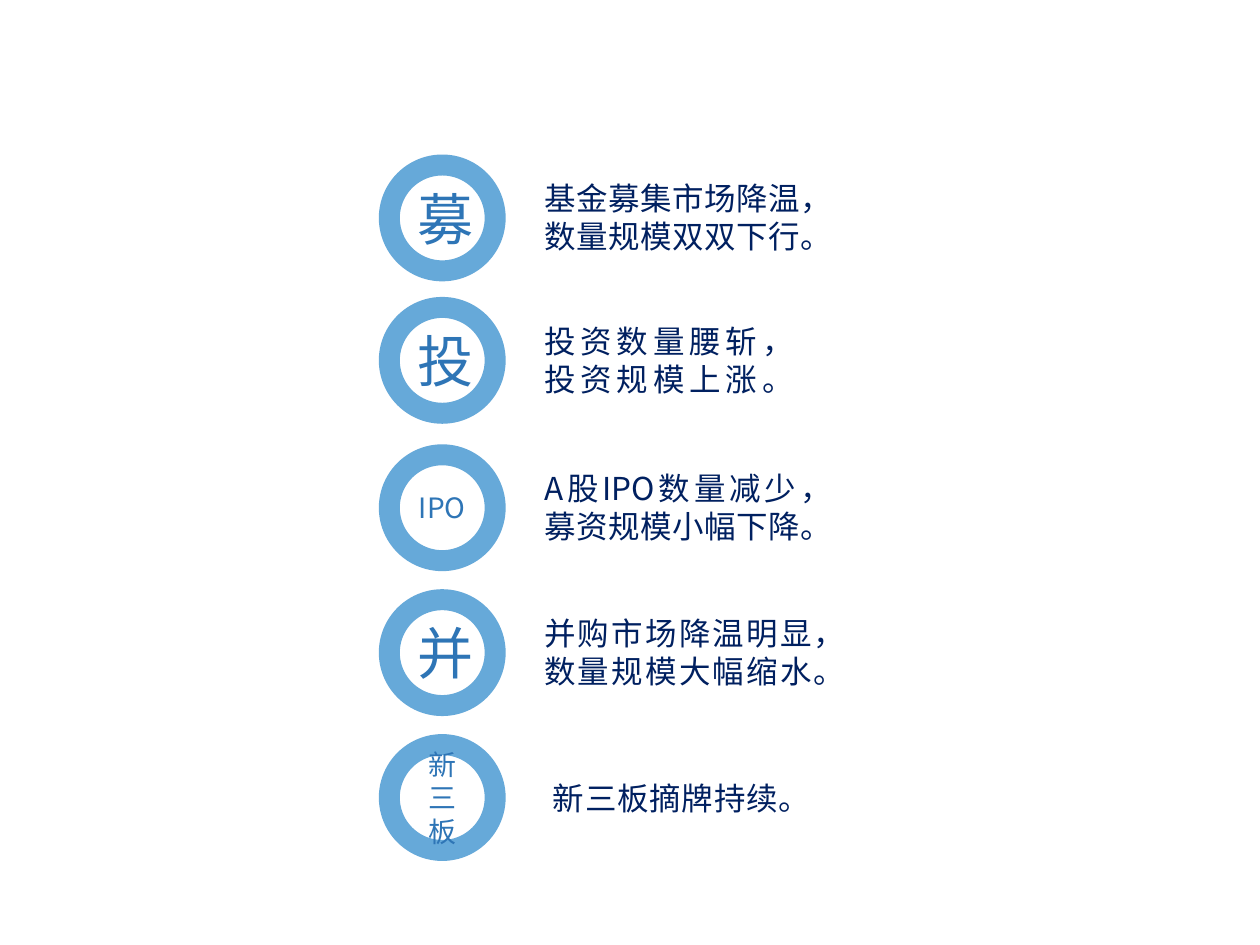
from dataclasses import dataclass

import pptx
import pptx.dml.color
import pptx.enum.lang
import pptx.enum.shapes
import pptx.enum.text
import pptx.oxml
import pptx.oxml.ns
import pptx.util
from pptx.util import Inches


@dataclass(frozen=True)
class Theme:
    ring: str = "0070C0"
    label: str = "2E75B6"
    body: str = "002060"
    label_font: str = "Noto Sans CJK JP"
    body_font: str = "Noto Sans CJK SC"
    ring_width: float = 12
    ring_alpha: int = 60
    large: float = 32
    small: float = 16
    body_size: float = 18


class Slide:
    def __init__(self, page, theme):
        self.page = page
        self.theme = theme

    def add_span(self, para, text, font, size, color, align):
        para.alignment = align
        span = para.add_run()
        span.text = text
        span.font.name = font
        span.font.size = pptx.util.Pt(size)
        span.font.color.rgb = pptx.dml.color.RGBColor.from_string(color)
        span.font.language_id = pptx.enum.lang.MSO_LANGUAGE_ID.SIMPLIFIED_CHINESE
        # East Asian glyphs take their typeface from a:ea, placed after a:latin
        latin = span.font._element.find(pptx.oxml.ns.qn("a:latin"))
        latin.addnext(pptx.oxml.parse_xml(
            f'<a:ea {pptx.oxml.ns.nsdecls("a")} typeface="{font}"/>'))

    def ring(self, left, top, size, label, label_size):
        theme = self.theme
        ring = self.page.shapes.add_shape(
            pptx.enum.shapes.MSO_SHAPE.OVAL,
            Inches(left), Inches(top), Inches(size), Inches(size))
        ring.shadow.inherit = False
        ring.fill.background()
        ring.line.width = pptx.util.Pt(theme.ring_width)
        ring.line.color.rgb = pptx.dml.color.RGBColor.from_string(theme.ring)
        color = ring.line._ln.find(".//" + pptx.oxml.ns.qn("a:srgbClr"))
        color.append(pptx.oxml.parse_xml(
            f'<a:alpha {pptx.oxml.ns.nsdecls("a")} val="{theme.ring_alpha * 1000}"/>'))
        frame = ring.text_frame
        frame.word_wrap = True
        frame.vertical_anchor = pptx.enum.text.MSO_ANCHOR.MIDDLE
        self.add_span(frame.paragraphs[0], label, theme.label_font, label_size,
                      theme.label, pptx.enum.text.PP_ALIGN.CENTER)

    def text(self, left, top, width, height, lines):
        theme = self.theme
        box = self.page.shapes.add_textbox(
            Inches(left), Inches(top), Inches(width), Inches(height))
        frame = box.text_frame
        frame.word_wrap = True
        frame.auto_size = pptx.enum.text.MSO_AUTO_SIZE.SHAPE_TO_FIT_TEXT
        for index, line in enumerate(lines):
            para = frame.add_paragraph() if index else frame.paragraphs[0]
            self.add_span(para, line, theme.body_font, theme.body_size,
                          theme.body, pptx.enum.text.PP_ALIGN.JUSTIFY)


RING_LEFT, RING_SIZE = 3.09, 0.84
TEXT_HEIGHTS = {1: 0.4, 2: 0.71}


def main():
    theme = Theme()
    deck = pptx.Presentation()
    deck.slide_width, deck.slide_height = Inches(10), Inches(7.5)
    slide = Slide(deck.slides.add_slide(deck.slide_layouts[6]), theme)

    # ring top, label, label size, text left, text width, lines
    topics = [
        (1.31, "募", theme.large, 4.22, 2.23, ["基金募集市场降温，", "数量规模双双下行。"]),
        (2.44, "投", theme.large, 4.22, 1.93, ["投资数量腰斩，", "投资规模上涨。"]),
        (3.61, "IPO", theme.small, 4.22, 2.23, ["A股IPO数量减少，", "募资规模小幅下降。"]),
        (4.76, "并", theme.large, 4.22, 2.34, ["并购市场降温明显，", "数量规模大幅缩水。"]),
        (5.91, "新三板", theme.small, 4.29, 1.99, ["新三板摘牌持续。"]),
    ]
    for top, label, label_size, left, width, lines in topics:
        slide.ring(RING_LEFT, top, RING_SIZE, label, label_size)
        height = TEXT_HEIGHTS[len(lines)]
        slide.text(left, top + (RING_SIZE - height) / 2, width, height, lines)

    deck.save("out.pptx")


if __name__ == "__main__":
    main()
